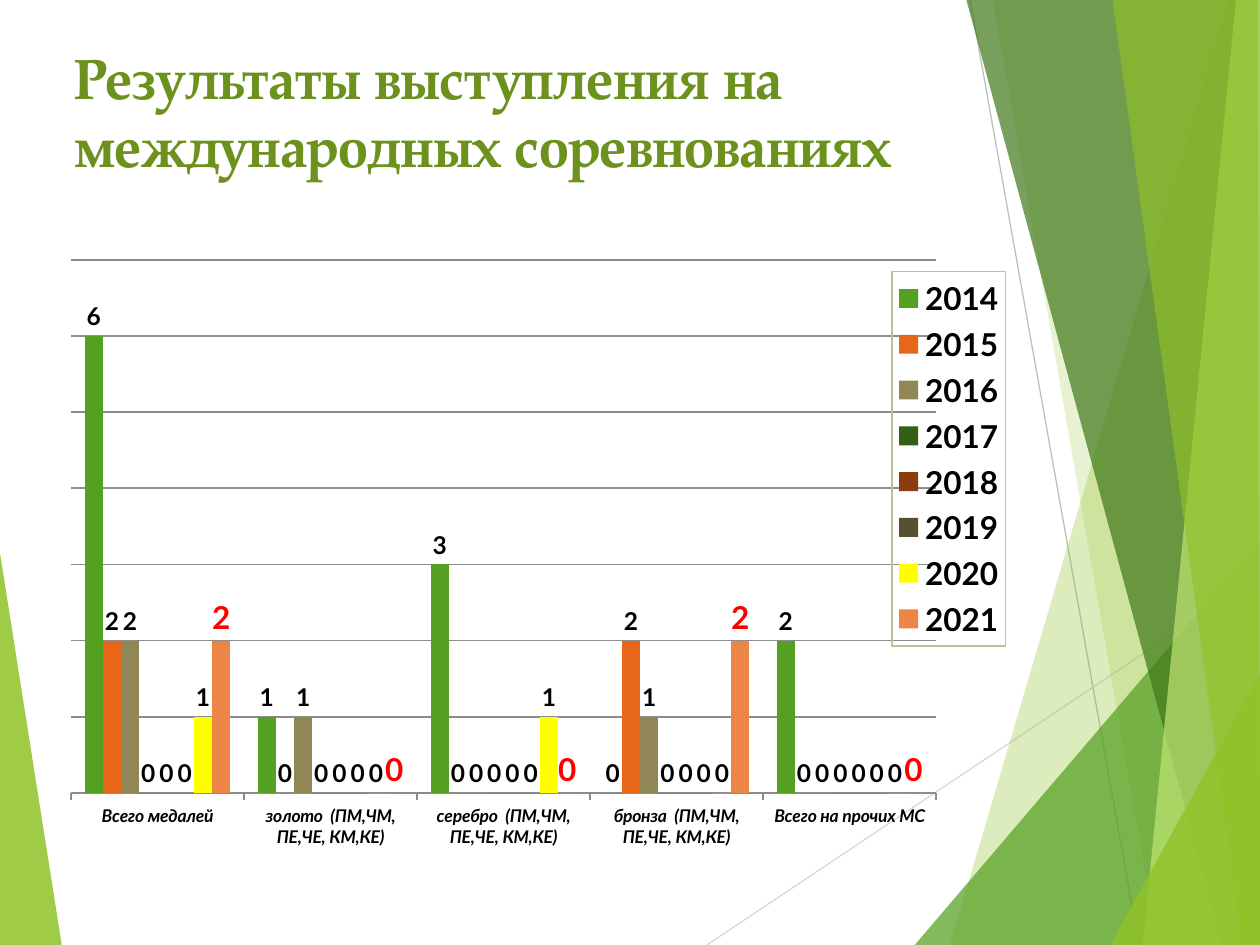
from dataclasses import dataclass

from lxml.etree import SubElement
from pptx import Presentation
from pptx.chart.data import CategoryChartData
from pptx.dml.color import RGBColor
from pptx.enum.chart import XL_CHART_TYPE, XL_LABEL_POSITION, XL_LEGEND_POSITION, XL_TICK_MARK
from pptx.enum.shapes import MSO_CONNECTOR
from pptx.enum.text import MSO_ANCHOR, PP_ALIGN
from pptx.oxml import parse_xml
from pptx.oxml.ns import nsdecls, qn
from pptx.util import Inches, Pt


@dataclass(frozen=True)
class Theme:
    """Colours, fonts and type sizes of the slide."""
    title_font: str = "TeX Gyre Pagella"
    body_font: str = "Lato"
    title_size: float = 32.4
    legend_size: int = 18
    label_size: int = 14
    axis_size: int = 10
    title: str = "6C921D"
    text: str = "000000"
    highlight: str = "FF0000"
    grid: str = "8C8C8C"
    legend_border: str = "C4BD97"
    lime: str = "90C226"
    green: str = "54A021"
    forest: str = "3F7819"
    pale: str = "C0E474"


THEME = Theme()

FACETS = [
    ([(0, 4.39), (0.49, 7.5), (0, 7.5)], THEME.lime, 85),
    ([(9.75, 0), (7.54, 7.5), (10, 7.5), (10, 0)], THEME.lime, 30),
    ([(7.88, 0), (9.19, 7.5), (10, 7.5), (10, 0)], THEME.lime, 20),
    ([(7.26, 7.5), (10, 4.29), (10, 7.5)], THEME.green, 72),
    ([(7.67, 0), (9.7, 7.5), (10, 7.5), (10, 0)], THEME.forest, 70),
    ([(9.81, 0), (9.07, 7.5), (10, 7.5), (10, 0)], THEME.pale, 70),
    ([(8.83, 0), (9.86, 7.5), (10, 7.5), (9.98, 0)], THEME.lime, 65),
    ([(8.81, 7.5), (10, 5.35), (10, 7.5)], THEME.lime, 80),
]
RAYS = [((5.61, 7.5), (10, 4.57), "D9D9D9"), ((7.7, 0), (9.04, 7.5), "BFBFBF")]

CATEGORIES = [
    "Всего медалей",
    "золото  (ПМ,ЧМ, ПЕ,ЧЕ, КМ,КЕ)",
    "серебро  (ПМ,ЧМ, ПЕ,ЧЕ, КМ,КЕ)",
    "бронза  (ПМ,ЧМ, ПЕ,ЧЕ, КМ,КЕ)",
    "Всего на прочих МС",
]
YEARS = [
    ("2014", (6, 1, 3, 0, 2), "54A021"),
    ("2015", (2, 0, 0, 2, 0), "E76618"),
    ("2016", (2, 1, 0, 1, 0), "918655"),
    ("2017", (0, 0, 0, 0, 0), "326014"),
    ("2018", (0, 0, 0, 0, 0), "8B3D0E"),
    ("2019", (0, 0, 0, 0, 0), "575033"),
    ("2020", (1, 0, 1, 0, 0), "FFFF00"),
    ("2021", (2, 0, 0, 2, 0), "EC8546"),
]


def set_font(font, name, size, color):
    """Apply a bold face, size and colour to a font."""
    font.name = name
    font.size = Pt(size)
    font.bold = True
    font.color.rgb = RGBColor.from_string(color)


def set_line(line, color, width):
    """Give a line its colour and width in points."""
    line.color.rgb = RGBColor.from_string(color)
    line.width = Pt(width)


def add_facet(slide, points, color, opacity):
    """Add a translucent polygon without an outline."""
    start, *rest = [(Inches(x), Inches(y)) for x, y in points]
    builder = slide.shapes.build_freeform(*start)
    builder.add_line_segments(rest, close=True)
    facet = builder.convert_to_shape()
    facet.shadow.inherit = False
    facet.fill.solid()
    facet.fill.fore_color.rgb = RGBColor.from_string(color)
    facet.line.fill.background()
    fill_color = facet.element.spPr.find(qn("a:solidFill"))[0]
    SubElement(fill_color, qn("a:alpha")).set("val", str(opacity * 1000))


def add_ray(slide, start, end, color):
    """Add a thin straight line without a shadow."""
    ends = [Inches(value) for value in (*start, *end)]
    ray = slide.shapes.add_connector(MSO_CONNECTOR.STRAIGHT, *ends)
    set_line(ray.line, color, 0.75)
    SubElement(ray.element.spPr, qn("a:effectLst"))


def add_backdrop(slide):
    """Draw the faceted green decoration."""
    left_facet, *right_facets = FACETS
    add_facet(slide, *left_facet)
    for ray in RAYS:
        add_ray(slide, *ray)
    for facet in right_facets:
        add_facet(slide, *facet)


def place_title(slide, text):
    """Fill and format the title placeholder and bring it forward."""
    title = slide.shapes.title
    title.left, title.top = Inches(0.49), Inches(0.29)
    title.width, title.height = Inches(7.58), Inches(1.44)
    frame = title.text_frame
    frame.text = text
    frame.word_wrap = True
    frame.vertical_anchor = MSO_ANCHOR.TOP
    paragraph = frame.paragraphs[0]
    paragraph.alignment = PP_ALIGN.LEFT
    paragraph.line_spacing = 1.0
    paragraph.space_before = Pt(0)
    set_font(paragraph.runs[0].font, THEME.title_font, THEME.title_size, THEME.title)
    title.element.getparent().append(title.element)


def manual_layout(x, y, width, height, inner=False):
    """Return a chart layout element given in fractions of the chart."""
    target = '<c:layoutTarget val="inner"/>' if inner else ""
    return parse_xml(
        f'<c:layout {nsdecls("c")}><c:manualLayout>{target}'
        '<c:xMode val="edge"/><c:yMode val="edge"/>'
        f'<c:x val="{x}"/><c:y val="{y}"/><c:w val="{width}"/><c:h val="{height}"/>'
        '</c:manualLayout></c:layout>'
    )


def format_axes(chart):
    """Style the category axis and leave only the value gridlines."""
    categories = chart.category_axis
    categories.major_tick_mark = XL_TICK_MARK.OUTSIDE
    set_line(categories.format.line, THEME.grid, 1)
    set_font(categories.tick_labels.font, THEME.body_font, THEME.axis_size, THEME.text)
    categories.tick_labels.font.italic = True
    values = chart.value_axis
    values.minimum_scale, values.maximum_scale, values.major_unit = 0, 7, 1
    values.has_major_gridlines = True
    set_line(values.major_gridlines.format.line, THEME.grid, 1)
    values.visible = False


def format_legend(chart):
    """Place the framed legend over the right end of the plot."""
    chart.has_legend = True
    legend = chart.legend
    legend.position = XL_LEGEND_POSITION.RIGHT
    legend.include_in_layout = False
    set_font(legend.font, THEME.body_font, THEME.legend_size, THEME.text)
    overlay = legend._element.find(qn("c:overlay"))
    overlay.addprevious(manual_layout(0.8, 0.06, 0.1, 0.6))
    overlay.addnext(parse_xml(
        f'<c:spPr {nsdecls("c", "a")}><a:noFill/><a:ln w="9525"><a:solidFill>'
        f'<a:srgbClr val="{THEME.legend_border}"/></a:solidFill></a:ln></c:spPr>'
    ))


def format_series(series, color, emphasized):
    """Colour one year's columns and show their values."""
    series.format.fill.solid()
    series.format.fill.fore_color.rgb = RGBColor.from_string(color)
    labels = series.data_labels
    labels.show_value = True
    labels.position = XL_LABEL_POSITION.OUTSIDE_END
    size = THEME.legend_size if emphasized else THEME.label_size
    set_font(labels.font, THEME.body_font, size, THEME.highlight if emphasized else THEME.text)


def add_medal_chart(slide):
    """Add the clustered columns of medals by year."""
    data = CategoryChartData()
    data.categories = CATEGORIES
    for year, medals, _ in YEARS:
        data.add_series(year, medals)
    chart = slide.shapes.add_chart(
        XL_CHART_TYPE.COLUMN_CLUSTERED, Inches(-0.12), Inches(1.86), Inches(9), Inches(4.95), data
    ).chart
    chart.has_title = False
    set_font(chart.font, THEME.body_font, THEME.legend_size, THEME.text)
    plot = chart.plots[0]
    plot.gap_width, plot.overlap = 150, 0
    plot.vary_by_categories = False
    for series, (year, _, color) in zip(plot.series, YEARS):
        format_series(series, color, year == YEARS[-1][0])
    format_axes(chart)
    format_legend(chart)
    plot_area = chart.element.find(".//" + qn("c:plotArea"))
    for layout in plot_area.findall(qn("c:layout")):
        plot_area.remove(layout)
    plot_area.insert(0, manual_layout(0.076, 0.041, 0.763, 0.855, inner=True))


def main():
    """Build and save the slide."""
    deck = Presentation()
    deck.slide_width, deck.slide_height = Inches(10), Inches(7.5)
    slide = deck.slides.add_slide(deck.slide_layouts[5])
    add_backdrop(slide)
    place_title(slide, "Результаты выступления на международных соревнованиях")
    add_medal_chart(slide)
    deck.save("out.pptx")


if __name__ == "__main__":
    main()
